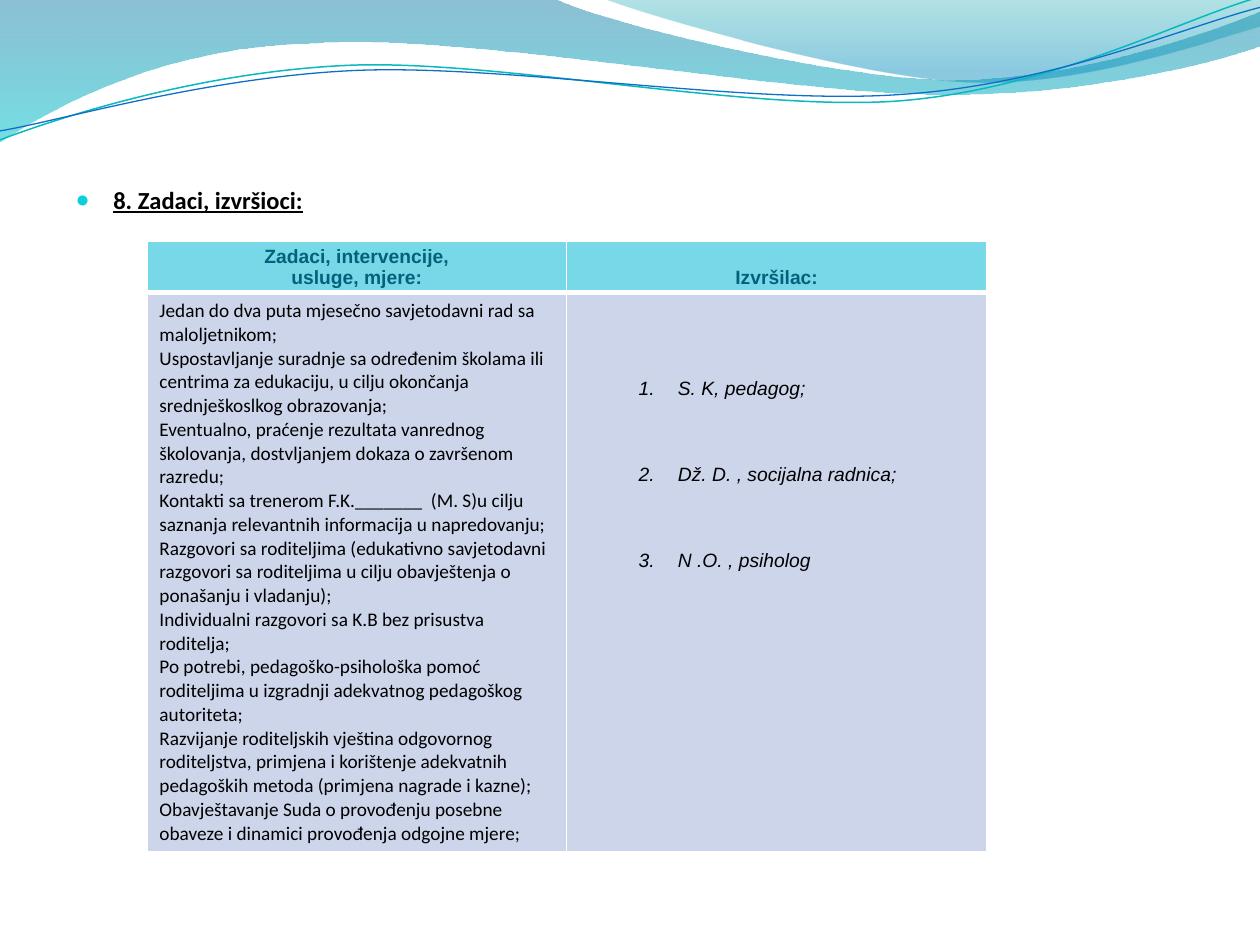
from lxml import etree
from pptx import Presentation
from pptx.dml.color import RGBColor
from pptx.enum.text import MSO_ANCHOR, MSO_AUTO_SIZE, PP_ALIGN
from pptx.oxml.ns import qn
from pptx.util import Cm, Pt

CENTER = PP_ALIGN.CENTER
BOTTOM, MIDDLE = MSO_ANCHOR.BOTTOM, MSO_ANCHOR.MIDDLE
NO_FIT = MSO_AUTO_SIZE.NONE

BLACK = RGBColor(0x00, 0x00, 0x00)
WHITE = RGBColor(0xFF, 0xFF, 0xFF)
AQUA = RGBColor(0x0B, 0xD0, 0xD9)
TEAL = RGBColor(0x0A, 0xB8, 0xBF)
BLUE = RGBColor(0x0F, 0x6F, 0xC6)
NAVY = RGBColor(0x04, 0x61, 0x7B)
HEAD = RGBColor(0x77, 0xD9, 0xE8)
PALE = RGBColor(0xCC, 0xD5, 0xEA)

# Paths in cm: two numbers are a straight step, six are a Bézier curve.
# Each gradient stop is position, colour, opacity in percent.
BANDS = [
    ([(0, 0), (11.18, -0.03),
      (12.09, 0.43, 16.87, 1.6, 19.25, 1.6),
      (21.67, 1.6, 24.33, 0.66, 25.4, 0.23),
      (25.43, 0.91),
      (24.97, 1.12, 22.1, 1.93, 18.95, 1.9),
      (15.8, 1.9, 9.7, 0.71, 6.53, 0.86),
      (3.28, 0.91, 1.17, 2.11, -0.03, 2.87)],
     [(0, RGBColor(0x00, 0x74, 0xA1), 45),
      (1, RGBColor(0x00, 0xC6, 0xCF), 55)]),
    ([(12.17, -0.03),
      (12.93, 0.28, 17.32, 1.57, 19.53, 1.65),
      (21.74, 1.75, 24.41, 0.81, 25.4, 0.53),
      (25.4, 0)],
     [(0, RGBColor(0x00, 0xA1, 0xA9), 30),
      (0.8, RGBColor(0x00, 0x8B, 0xBF), 45)]),
]
LINES = [
    ([(-0.05, 2.22),
      (1.19, 1.82, 4.02, 1.04, 7.05, 1.05),
      (10.05, 1.07, 15.02, 2.37, 18.08, 2.29),
      (21.14, 2.2, 23.87, 0.91, 25.41, 0.55)], TEAL, 0.85),
    ([(-0.04, 2.04),
      (1.16, 1.9, 4.18, 1.15, 7.2, 1.16),
      (10.25, 1.18, 15.13, 2.25, 18.19, 2.16),
      (21.21, 2.1, 23.93, 1.06, 25.45, 0.75)], BLUE, 0.75),
]
TILT = 357.3

TASKS = [
    "Jedan do dva puta mjesečno savjetodavni rad sa maloljetnikom;",
    "Uspostavljanje suradnje sa određenim školama ili centrima za edukaciju, "
    "u cilju okončanja srednješkoslkog obrazovanja;",
    "Eventualno, praćenje rezultata vanrednog školovanja, dostvljanjem dokaza "
    "o završenom razredu;",
    "Kontakti sa trenerom F.K._______  (M. S)u cilju saznanja relevantnih "
    "informacija u napredovanju;",
    "Razgovori sa roditeljima (edukativno savjetodavni razgovori sa "
    "roditeljima u cilju obavještenja o ponašanju i vladanju);",
    "Individualni razgovori sa K.B bez prisustva roditelja;",
    "Po potrebi, pedagoško-psihološka pomoć roditeljima u izgradnji "
    "adekvatnog pedagoškog autoriteta;",
    "Razvijanje roditeljskih vještina odgovornog roditeljstva, primjena i "
    "korištenje adekvatnih pedagoških metoda (primjena nagrade i kazne);",
    "Obavještavanje Suda o provođenju posebne obaveze i dinamici provođenja "
    "odgojne mjere;",
]
STAFF = ["S. K, pedagog;", "Dž. D. , socijalna radnica;", "N .O. , psiholog"]


def draw(slide, path, left, top, close):
    """Build an outline, then join each curve's three points in one step."""
    pts = [(left + Cm(part[i]), top + Cm(part[i + 1]))
           for part in path for i in range(0, len(part), 2)]
    form = slide.shapes.build_freeform(*pts[0])
    form.add_line_segments(pts[1:], close=close)
    shape = form.convert_to_shape()
    shape.shadow.inherit = False
    steps = iter(list(shape.element.iter(qn("a:lnTo"))))
    for part in path[1:]:
        first = next(steps)
        if len(part) == 6:
            first.tag = qn("a:cubicBezTo")
            for _ in range(2):
                step = next(steps)
                first.append(step[0])
                step.getparent().remove(step)
    return shape


def add_waves(slide, left, top):
    for path, stops in BANDS:
        band = draw(slide, path, left, top, True)
        band.line.fill.background()
        band.fill.gradient()
        band.fill.gradient_angle = 270
        for stop, (pos, color, _) in zip(band.fill.gradient_stops, stops):
            stop.position = pos
            stop.color.rgb = color
        for tint, (_, _, alpha) in zip(
                band.element.spPr.iter(qn("a:srgbClr")), stops):
            etree.SubElement(tint, qn("a:alpha"), val=str(alpha * 1000))
    for path, color, width in LINES:
        line = draw(slide, path, left, top, False)
        line.rotation = TILT
        line.fill.background()
        line.line.color.rgb = color
        line.line.width = Pt(width)


def style(frame, font, size, color, bold=False, italic=False):
    for para in frame.paragraphs:
        for run in para.runs:
            face = run.font
            face.name, face.size = font, Pt(size)
            face.bold, face.italic = bold, italic
            face.color.rgb = color


def indent(para, left, hang):
    props = para._p.get_or_add_pPr()
    props.set("marL", str(Cm(left)))
    props.set("indent", str(-Cm(hang)))
    return props


def add_topic(slide, left, top, width, height):
    body = slide.placeholders[1]
    body.left, body.top, body.width, body.height = left, top, width, height
    frame = body.text_frame
    frame.auto_size = NO_FIT
    frame.text = "8. Zadaci, izvršioci:"
    style(frame, "Calibri", 14, BLACK, bold=True)
    para = frame.paragraphs[0]
    para.runs[0].font.underline = True
    props = indent(para, 0.76, 0.76)
    tint = etree.SubElement(props, qn("a:buClr"))
    etree.SubElement(tint, qn("a:srgbClr"), val=str(AQUA))
    etree.SubElement(props, qn("a:buSzPct"), val="95000")
    etree.SubElement(props, qn("a:buChar"), char="●")


def paint(cell, color, above, below):
    """Fill a cell and give it white borders."""
    props = cell._tc.get_or_add_tcPr()
    for side, width in (("L", 1), ("R", 1), ("T", above), ("B", below)):
        edge = etree.SubElement(props, qn("a:ln" + side), w=str(Pt(width)))
        fill = etree.SubElement(edge, qn("a:solidFill"))
        etree.SubElement(fill, qn("a:srgbClr"), val=str(WHITE))
    cell.fill.solid()
    cell.fill.fore_color.rgb = color


def add_plan(slide, left, top, width, height):
    table = slide.shapes.add_table(2, 2, left, top, width, height).table
    table.first_row = table.horz_banding = False
    table.rows[0].height = Cm(1.03)
    table.rows[1].height = height - Cm(1.03)

    heads = [("Zadaci, intervencije,\nusluge, mjere:", MIDDLE, 0),
             ("Izvršilac:", BOTTOM, Cm(0.08))]
    for cell, (text, anchor, gap) in zip(table.rows[0].cells, heads):
        paint(cell, HEAD, 1, 3)
        cell.text_frame.text = text
        cell.vertical_anchor = anchor
        cell.margin_left = cell.margin_right = Cm(0.18)
        cell.margin_top, cell.margin_bottom = 0, gap
        style(cell.text_frame, "Arial", 11, NAVY, bold=True)
        for para in cell.text_frame.paragraphs:
            para.alignment = CENTER

    tasks, staff = table.rows[1].cells
    for cell, lines in ((tasks, TASKS), (staff, STAFF)):
        paint(cell, PALE, 3, 1)
        cell.text_frame.text = "\n".join(lines)
    style(tasks.text_frame, "Calibri", 11, BLACK)
    style(staff.text_frame, "Arial", 11, BLACK, italic=True)
    staff.margin_left = staff.margin_right = Cm(0.18)
    staff.margin_top = Cm(1.72)
    staff.margin_bottom = 0
    for i, para in enumerate(staff.text_frame.paragraphs):
        para.level = 1
        para.space_before = Pt(36.8 if i else 0)
        props = indent(para, 2.06, 0.79)
        etree.SubElement(props, qn("a:buFont"), typeface="+mj-lt")
        etree.SubElement(props, qn("a:buAutoNum"), type="arabicPeriod")


def main():
    deck = Presentation()
    deck.slide_width, deck.slide_height = Cm(25.4), Cm(19.05)
    slide = deck.slides.add_slide(deck.slide_layouts[1])
    title = slide.shapes.title.element
    title.getparent().remove(title)
    add_waves(slide, Cm(0), Cm(0))
    add_topic(slide, Cm(1.27), Cm(3.6), Cm(22.86), Cm(13.97))
    add_plan(slide, Cm(2.96), Cm(4.87), Cm(16.93), Cm(12.28))
    deck.save("out.pptx")


if __name__ == "__main__":
    main()
